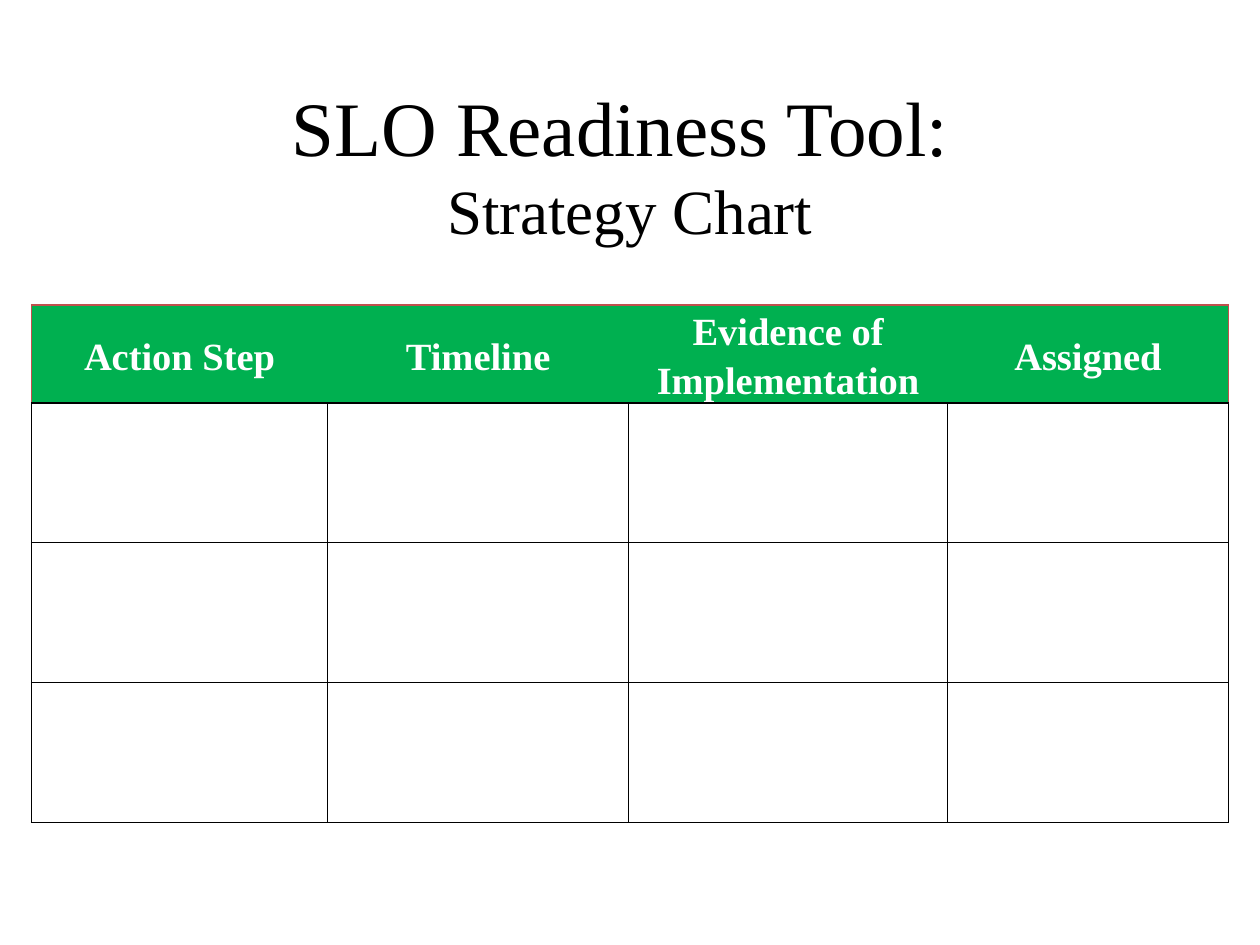
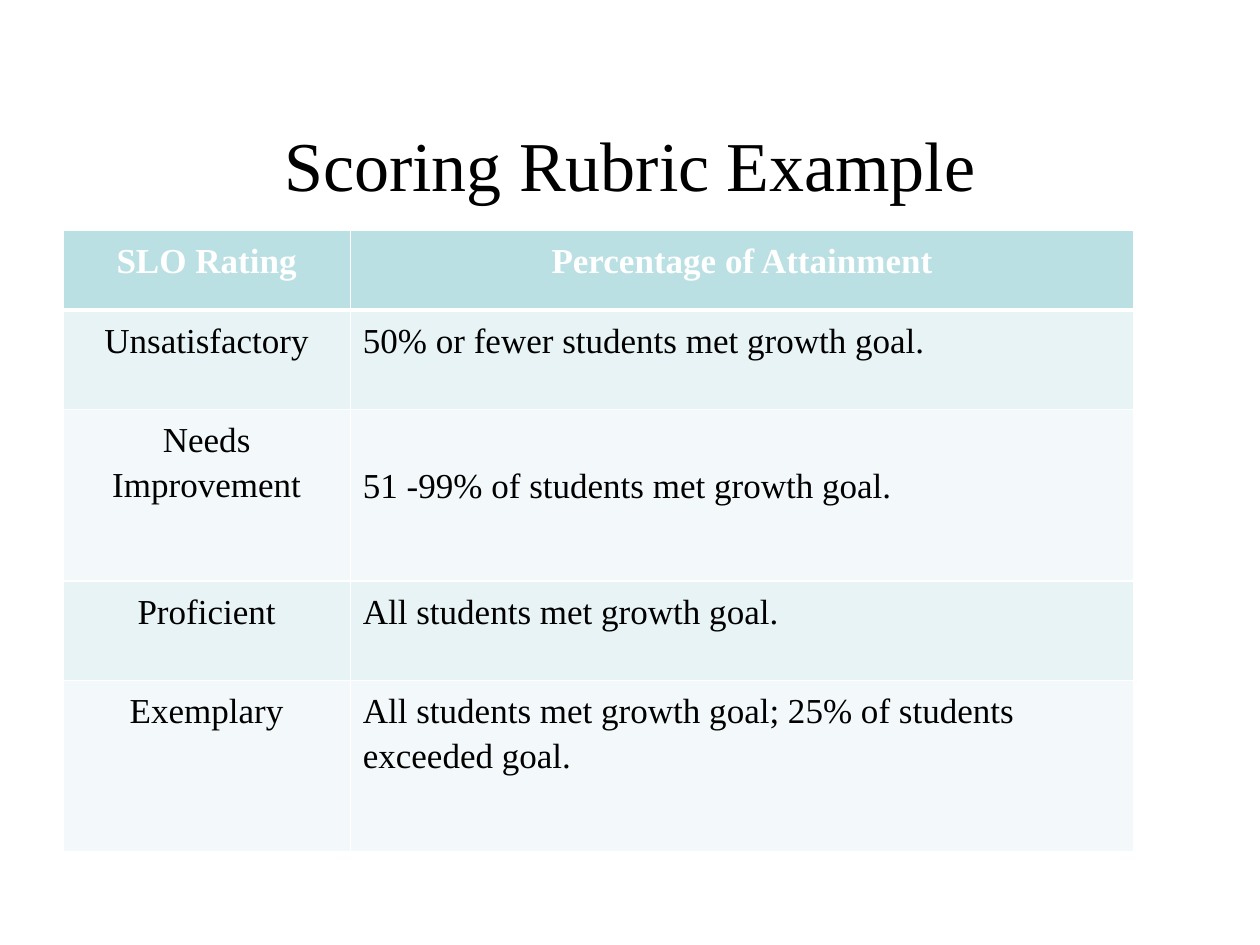
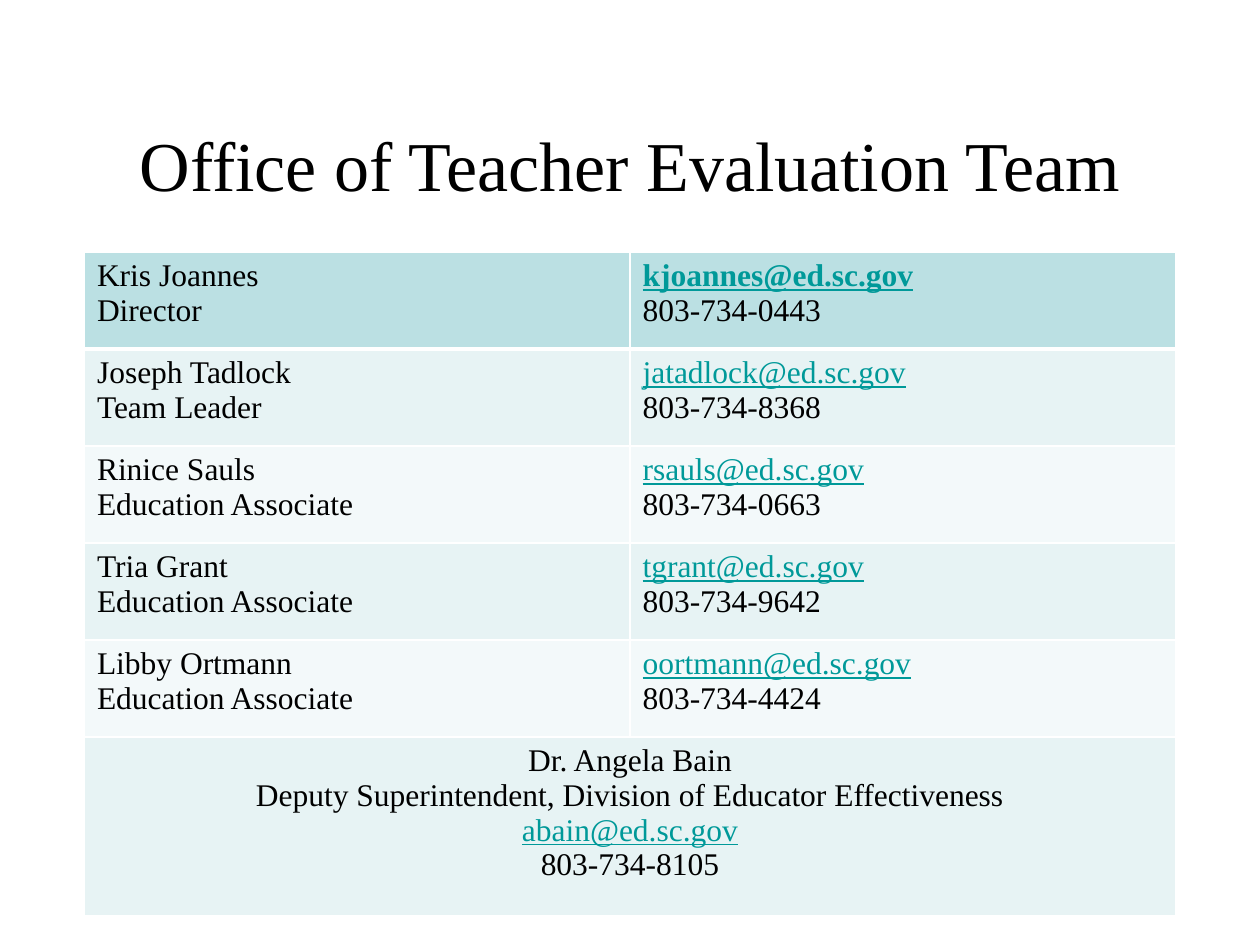
from lxml import etree
from pptx import Presentation
from pptx.dml.color import RGBColor
from pptx.enum.text import MSO_ANCHOR, PP_ALIGN
from pptx.oxml.ns import qn
from pptx.util import Inches, Pt

CENTER, LEFT = PP_ALIGN.CENTER, PP_ALIGN.LEFT
MIDDLE = MSO_ANCHOR.MIDDLE
FONT = "Times New Roman"
COLORS = {
    "text": "000000",
    "white": "FFFFFF",
    "green": "00B050",
    "red": "C0504D",
    "head": "BBE0E3",
    "band dark": "E7F3F4",
    "band light": "F3F9FA",
    "link": "009999",
}
SIDES = ["lnL", "lnR", "lnT", "lnB"]

prs = Presentation()
prs.slide_width, prs.slide_height = Inches(10), Inches(7.5)
title_only = prs.slide_layouts[5]


def set_edges(cell, color, sides=SIDES, points=1):
    """Draw the given sides of a cell, or hide them when color is None."""
    properties = cell._tc.get_or_add_tcPr()
    for side in sides:
        edge = properties.find(qn("a:" + side))
        if edge is None:
            edge = etree.Element(qn("a:" + side))
            properties.insert(SIDES.index(side), edge)
        edge.clear()
        edge.set("w", str(Pt(points)))
        if color is None:
            etree.SubElement(edge, qn("a:noFill"))
        else:
            fill = etree.SubElement(edge, qn("a:solidFill"))
            etree.SubElement(fill, qn("a:srgbClr"), val=COLORS[color])


def add_table_slide(title, title_sizes, corner, widths, heights, rows, size,
                    spacing, edge_color, head_fill, band_fills):
    """Add a slide with a title and a filled table, and return the table."""
    slide = prs.slides.add_slide(title_only)
    heading = slide.shapes.title
    heading.left, heading.top = Inches(0.75), Inches(0.67)
    heading.width, heading.height = Inches(8.5), Inches(1.25)
    heading.text_frame.text = title
    heading.text_frame.vertical_anchor = MIDDLE
    line = heading.text_frame.paragraphs[0]
    line.alignment = CENTER
    for run, title_size in zip(line.runs, title_sizes):
        run.font.name, run.font.size = FONT, Pt(title_size)
        run.font.color.rgb = RGBColor.from_string(COLORS["text"])

    table = slide.shapes.add_table(
        len(heights), len(widths), Inches(corner[0]), Inches(corner[1]),
        Inches(sum(widths)), Inches(sum(heights))).table
    for column, width in zip(table.columns, widths):
        column.width = Inches(width)
    for row, height in zip(table.rows, heights):
        row.height = Inches(height)

    for r, texts in enumerate(rows):
        fill = band_fills[(r - 1) % len(band_fills)] if r else head_fill
        for c, text in enumerate(texts):
            cell = table.cell(r, c)
            set_edges(cell, edge_color)
            if fill:
                cell.fill.solid()
                cell.fill.fore_color.rgb = RGBColor.from_string(COLORS[fill])
            else:
                cell.fill.background()
            if not text:
                continue
            cell.text_frame.text = text
            for paragraph in cell.text_frame.paragraphs:
                paragraph.line_spacing = spacing
                for run in paragraph.runs:
                    is_link = "@" in run.text
                    run.font.name, run.font.size = FONT, Pt(size)
                    run.font.bold = is_link and r == 0
                    run.font.underline = is_link
                    run.font.color.rgb = RGBColor.from_string(
                        COLORS["link" if is_link else "text"])
    return table


# Slide 1: strategy chart
steps = ["Action Step", "Timeline", "Evidence of Implementation", "Assigned"]
strategy = add_table_slide(
    "SLO Readiness Tool: \vStrategy Chart", [44, 36], (0.25, 2.42),
    [2.35, 2.39, 2.53, 2.23], [0.67] + [1.11] * 3,
    [steps] + [[""] * 4] * 3, 22, 1.15, "text", "green", [None])
for c in range(len(steps)):
    cell = strategy.cell(0, c)
    cell.vertical_anchor = MIDDLE
    cell.margin_left = cell.margin_right = Inches(0.06)
    cell.margin_top = cell.margin_bottom = 0
    set_edges(cell, None, ["lnL", "lnR"])
    set_edges(cell, "red", ["lnT"])
set_edges(strategy.cell(0, 0), "red", ["lnL"])
set_edges(strategy.cell(0, 3), "red", ["lnR"])

# Slide 2: scoring rubric
rubric = add_table_slide(
    "Scoring Rubric Example", [40], (0.5, 1.83),
    [2.28, 6.22], [0.63, 0.79, 1.36, 0.79, 1.36],
    [["SLO Rating", "Percentage of Attainment"],
     ["Unsatisfactory", "50% or fewer students met growth goal."],
     ["Needs Improvement", "51 -99% of students met growth goal."],
     ["Proficient", "All students met growth goal."],
     ["Exemplary",
      "All students met growth goal; 25% of students exceeded goal."]],
    20, 1.15, "white", "head", ["band dark", "band light"])
for r in range(len(rubric.rows)):
    rubric.cell(r, 0).text_frame.paragraphs[0].alignment = CENTER
    rubric.cell(r, 1).text_frame.paragraphs[0].alignment = LEFT if r else CENTER
rubric.cell(2, 1).margin_top = Inches(0.41)  # level with "Improvement"

# White bold header text
for table in (strategy, rubric):
    for cell in table.rows[0].cells:
        paragraph = cell.text_frame.paragraphs[0]
        paragraph.alignment = CENTER
        paragraph.runs[0].font.bold = True
        paragraph.runs[0].font.color.rgb = RGBColor.from_string(COLORS["white"])

# Slide 3: team contacts
team = add_table_slide(
    "Office of Teacher Evaluation Team", [40], (0.67, 2),
    [4.33, 4.33], [0.77] * 5 + [1.42],
    [["Kris Joannes\nDirector", "kjoannes@ed.sc.gov\n803-734-0443"],
     ["Joseph Tadlock\nTeam Leader", "jatadlock@ed.sc.gov\n803-734-8368"],
     ["Rinice Sauls\nEducation Associate", "rsauls@ed.sc.gov\n803-734-0663"],
     ["Tria Grant\nEducation Associate", "tgrant@ed.sc.gov\n803-734-9642"],
     ["Libby Ortmann\nEducation Associate", "oortmann@ed.sc.gov\n803-734-4424"],
     ["Dr. Angela Bain\n"
      "Deputy Superintendent, Division of Educator Effectiveness\n"
      "abain@ed.sc.gov\n803-734-8105", ""]],
    18, 1.0, "white", "head", ["band dark", "band light"])
deputy = team.cell(5, 0)
deputy.merge(team.cell(5, 1))
for paragraph in deputy.text_frame.paragraphs:
    paragraph.alignment = CENTER

# Thick rule below the header rows
for table in (rubric, team):
    for c in range(2):
        set_edges(table.cell(0, c), "white", ["lnB"], 3)
        set_edges(table.cell(1, c), "white", ["lnT"], 3)

prs.save("out.pptx")
